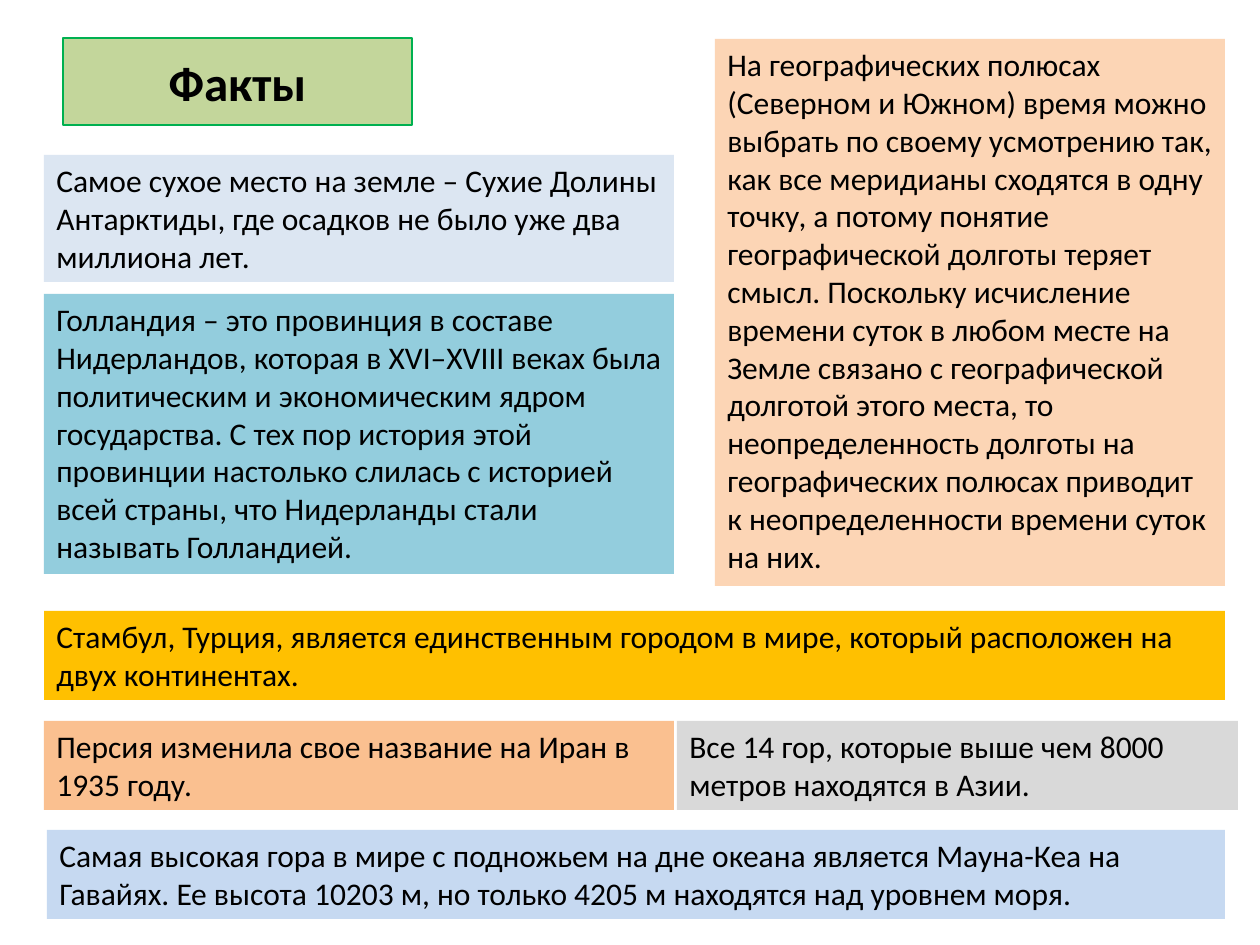
from pptx import Presentation
from pptx.dml.color import RGBColor
from pptx.enum.shapes import MSO_SHAPE
from pptx.enum.text import MSO_ANCHOR, MSO_AUTO_SIZE, PP_ALIGN
from pptx.util import Pt

EMU_PER_PX = 914400 / 126
LEFT, COLUMN_WIDTH = 44, 630
TWO_LINES = 89

FACTS = [
    ((LEFT, 155, COLUMN_WIDTH, 127), "DCE6F2",
     "Самое сухое место на земле – Сухие Долины Антарктиды, где осадков "
     "не было уже два миллиона лет."),
    ((LEFT, 294, COLUMN_WIDTH, 280), "93CDDD",
     "Голландия – это провинция в составе Нидерландов, которая в XVI–XVIII "
     "веках была политическим и экономическим ядром государства. С тех пор "
     "история этой провинции настолько слилась с историей всей страны, что "
     "Нидерланды стали называть Голландией."),
    ((715, 39, 510, 547), "FCD5B5",
     "На географических полюсах (Северном и Южном) время можно выбрать по "
     "своему усмотрению так, как все меридианы сходятся в одну точку, а потому "
     "понятие географической долготы теряет смысл. Поскольку исчисление времени "
     "суток в любом месте на Земле связано с географической долготой этого "
     "места, то неопределенность долготы на географических полюсах приводит "
     "к неопределенности времени суток на них."),
    ((LEFT, 611, 1181, TWO_LINES), "FFC000",
     "Стамбул, Турция, является единственным городом в мире, который "
     "расположен на двух континентах."),
    ((LEFT, 721, COLUMN_WIDTH, TWO_LINES), "FAC090",
     "Персия изменила свое название на Иран в 1935 году."),
    ((677, 721, 561, TWO_LINES), "D9D9D9",
     "Все 14 гор, которые выше чем 8000 метров находятся в Азии."),
    ((47, 830, 1178, TWO_LINES), "C6D9F1",
     "Самая высокая гора в мире с подножьем на дне океана является Мауна-Кеа "
     "на Гавайях. Ее высота 10203 м, но только 4205 м находятся над уровнем моря."),
]


def px(length):
    return round(length * EMU_PER_PX)


def color(hex_string):
    return RGBColor.from_string(hex_string)


def write(frame, text, size=18, bold=False, align=PP_ALIGN.LEFT, anchor=MSO_ANCHOR.TOP):
    frame.word_wrap = True
    frame.vertical_anchor = anchor
    paragraph = frame.paragraphs[0]
    paragraph.alignment = align
    run = paragraph.add_run()
    run.text = text
    run.font.name = "Calibri"
    run.font.size = Pt(size)
    run.font.bold = bold
    run.font.color.rgb = color("000000")


class FactSheet:
    """Holds the current slide and draws its panels in one style."""

    def __init__(self, slide):
        self.slide = slide

    def heading(self, box, fill, line, text):
        panel = self.slide.shapes.add_shape(MSO_SHAPE.RECTANGLE, *map(px, box))
        panel.shadow.inherit = False
        panel.fill.solid()
        panel.fill.fore_color.rgb = color(fill)
        panel.line.color.rgb = color(line)
        panel.line.width = Pt(0.75)
        write(panel.text_frame, text, size=28, bold=True,
              align=PP_ALIGN.CENTER, anchor=MSO_ANCHOR.MIDDLE)

    def fact(self, box, fill, text):
        panel = self.slide.shapes.add_textbox(*map(px, box))
        panel.fill.solid()
        panel.fill.fore_color.rgb = color(fill)
        write(panel.text_frame, text)
        panel.text_frame.auto_size = MSO_AUTO_SIZE.SHAPE_TO_FIT_TEXT


def main():
    deck = Presentation()
    deck.slide_width, deck.slide_height = px(1260), px(945)
    sheet = FactSheet(deck.slides.add_slide(deck.slide_layouts[6]))
    sheet.heading((63, 38, 349, 87), "C3D69B", "00B050", "Факты")
    for box, fill, text in FACTS:
        sheet.fact(box, fill, text)
    deck.save("out.pptx")


if __name__ == "__main__":
    main()
